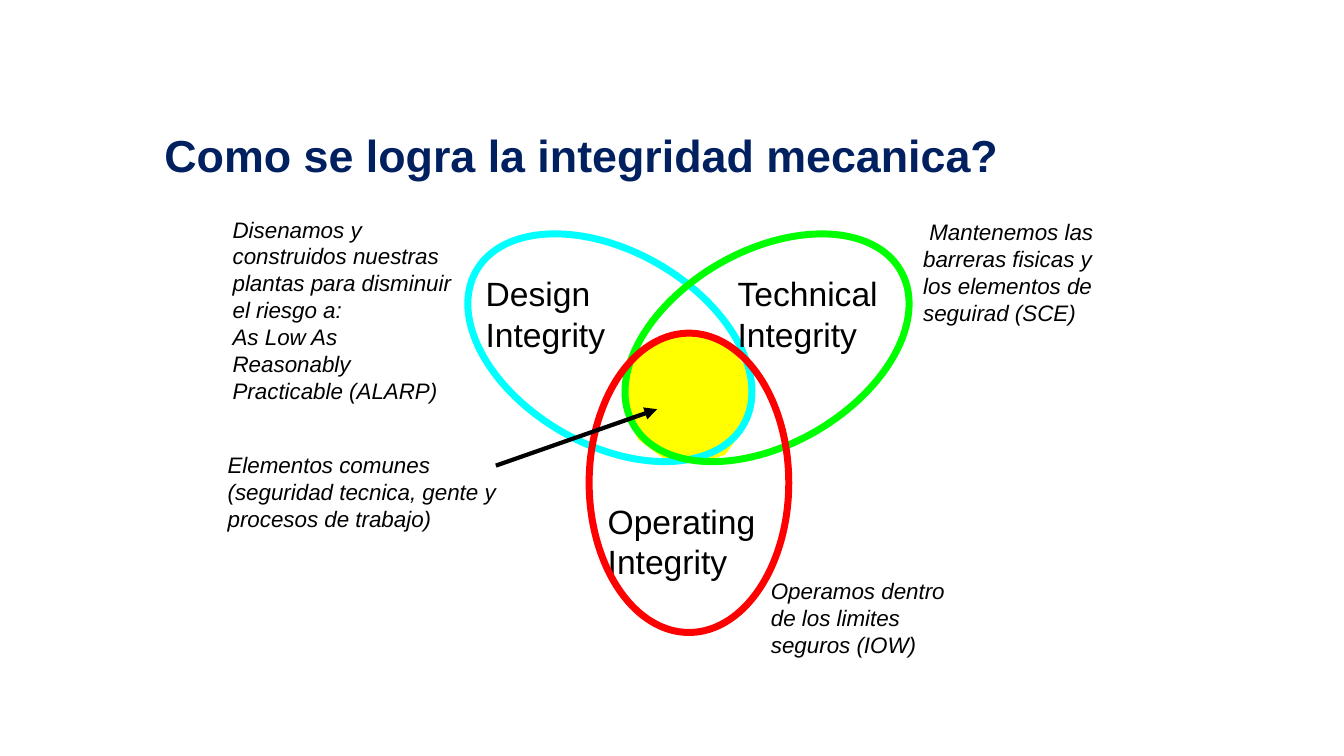
from lxml import etree
from pptx import Presentation
from pptx.dml.color import RGBColor
from pptx.enum.shapes import MSO_CONNECTOR as CONN, MSO_SHAPE as SHAPE
from pptx.enum.text import MSO_ANCHOR as ANCHOR, MSO_AUTO_SIZE as AUTO, PP_ALIGN as ALIGN
from pptx.oxml.ns import qn
from pptx.util import Pt

FONT = "Arial"
NAVY = RGBColor(0x00, 0x20, 0x60)
BLACK = RGBColor(0x00, 0x00, 0x00)
CYAN = RGBColor(0x00, 0xFF, 0xFF)
GREEN = RGBColor(0x00, 0xFF, 0x00)
RED = RGBColor(0xFF, 0x00, 0x00)
YELLOW = RGBColor(0xFF, 0xFF, 0x00)

CORE = [
    (493.2, 237.6), (517, 244), (532, 261.4), (536.4, 282.2), (532.8, 303.8),
    (518.4, 324.7), (496.8, 331.2), (475.9, 329), (456.5, 313.9),
    (447.1, 296.6), (447.8, 271.4), (455.8, 251.3), (473.8, 240.5),
]

RINGS = [
    (325.5, 179.3, 220.3, 138.2, 30, CYAN),
    (437.8, 179.3, 220.3, 138.2, 330, GREEN),
    (385.2, 273.6, 213.8, 142.6, 90, RED),
]

LABELS = [
    (339.8, 191.5, 121.7, 65.5, ["Design Integrity"]),
    (519.8, 191.5, 118.1, 65.5, ["Technical Integrity"]),
    (427, 354.2, 134.6, 65.5, ["Operating", "Integrity"]),
]

NOTES = [
    (652.3, 152.6, 138.2, 85,
     [" Mantenemos las barreras fisicas y los elementos de seguirad (SCE)"]),
    (159.1, 150.5, 177.1, 143.3,
     ["Disenamos y construidos nuestras plantas para disminuir el riesgo a:",
      "As Low As Reasonably Practicable (ALARP)"]),
    (543.6, 409, 151.2, 65.5, ["Operamos dentro de los limites seguros (IOW)"]),
    (155.5, 319, 214.6, 65.5,
     ["Elementos comunes", "(seguridad tecnica, gente y procesos de trabajo)"]),
]


def style(tf, size, color, bold=False, italic=False):
    for p in tf.paragraphs:
        p.alignment = ALIGN.LEFT
        for r in p.runs:
            r.font.name = FONT
            r.font.size = Pt(size)
            r.font.color.rgb = color
            r.font.bold = bold
            r.font.italic = italic


def set_title(slide, text):
    sp = slide.shapes.title
    sp.left, sp.top, sp.width, sp.height = Pt(110.2), Pt(96.5), Pt(808.6), Pt(33.1)
    tf = sp.text_frame
    tf.text = text
    tf.auto_size = AUTO.NONE
    tf.vertical_anchor = ANCHOR.MIDDLE
    tf.paragraphs[0].line_spacing = 0.9
    style(tf, 32, NAVY, bold=True)


def add_core(slide):
    builder = slide.shapes.build_freeform(*CORE[0], scale=Pt(1))
    builder.add_line_segments(CORE[1:], close=True)
    sp = builder.convert_to_shape()
    sp.shadow.inherit = False
    sp.fill.solid()
    sp.fill.fore_color.rgb = YELLOW
    sp.line.fill.background()


def add_ring(slide, x, y, w, h, angle, color):
    sp = slide.shapes.add_shape(SHAPE.OVAL, Pt(x), Pt(y), Pt(w), Pt(h))
    sp.rotation = angle
    sp.shadow.inherit = False
    sp.fill.background()
    sp.line.color.rgb = color
    sp.line.width = Pt(5)


def add_text(slide, x, y, w, h, lines, size, italic=False):
    sp = slide.shapes.add_textbox(Pt(x), Pt(y), Pt(w), Pt(h))
    tf = sp.text_frame
    tf.word_wrap = True
    tf.auto_size = AUTO.SHAPE_TO_FIT_TEXT
    tf.text = "\n".join(lines)
    style(tf, size, BLACK, italic=italic)


def add_arrow(slide, x1, y1, x2, y2):
    line = slide.shapes.add_connector(CONN.STRAIGHT, Pt(x1), Pt(y1), Pt(x2), Pt(y2))
    line.line.color.rgb = BLACK
    line.line.width = Pt(3)
    ln = line.line._get_or_add_ln()
    etree.SubElement(ln, qn("a:tailEnd"), type="triangle")
    etree.SubElement(line._element.spPr, qn("a:effectLst"))


def main():
    prs = Presentation()
    prs.slide_width, prs.slide_height = Pt(960), Pt(540)
    slide = prs.slides.add_slide(prs.slide_layouts[5])
    set_title(slide, "Como se logra la integridad mecanica?")
    add_core(slide)
    cyan, green, red = RINGS
    add_ring(slide, *cyan)
    for label in LABELS:
        add_text(slide, *label, size=24)
    for ring in (green, red):
        add_ring(slide, *ring)
    for note in NOTES:
        add_text(slide, *note, size=16, italic=True)
    add_arrow(slide, 354.2, 332.6, 469.4, 292.3)
    prs.save("out.pptx")


if __name__ == "__main__":
    main()
